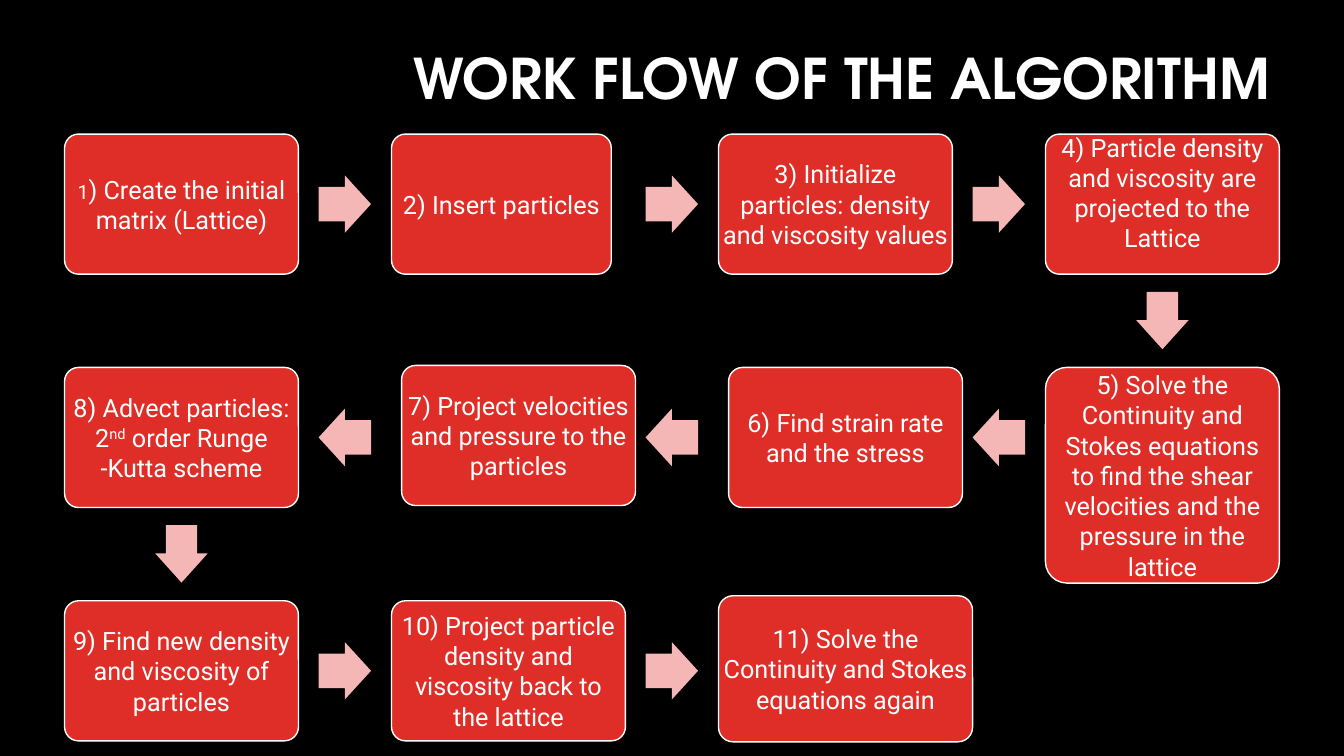
from dataclasses import dataclass

import pptx
import pptx.dml.color
import pptx.enum.shapes
import pptx.enum.text
import pptx.util
from pptx.dml.color import RGBColor
from pptx.util import Inches

BLACK = RGBColor(0x00, 0x00, 0x00)
WHITE = RGBColor(0xFF, 0xFF, 0xFF)
RED = RGBColor(0xDF, 0x2E, 0x28)
PINK = RGBColor(0xF4, 0xB7, 0xB5)

LEFT, TOP = 0.64, 1.33
COLUMN_PITCH, ROW_PITCH = 3.243, 2.315
BOX_W, BOX_H = 2.32, 1.39
ARROW_W, ARROW_H = 0.52, 0.57
RIGHT, DOWN, BACK = 0, 90, 180


@dataclass
class Run:
    text: str
    size: int = 18
    superscript: bool = False


@dataclass
class Step:
    column: int
    row: int
    runs: list[Run]
    dx: float = 0
    dy: float = 0
    width: float = BOX_W
    height: float = BOX_H
    bottom_inset: float = 0


@dataclass
class Arrow:
    """Arrow leaving the cell at column, row; BACK arrows point into it."""
    column: int
    row: int
    rotation: int


STEPS = [
    Step(0, 0, [Run("1", 14), Run(") Create the initial matrix (Lattice)")]),
    Step(1, 0, [Run("2) Insert particles")], width=2.18),
    Step(2, 0, [Run("3) Initialize particles: density and viscosity values")]),
    Step(3, 0, [Run("4) Particle density and viscosity are projected to the Lattice")],
         bottom_inset=0.23),
    Step(3, 1, [Run("5) Solve the Continuity and Stokes equations to find the shear "
                    "velocities and the pressure in the lattice")], height=2.14),
    Step(2, 1, [Run("6) Find strain rate and the stress")], dx=0.1),
    Step(1, 1, [Run("7) Project velocities and pressure to the particles")],
         dx=0.1, dy=-0.02),
    Step(0, 1, [Run("8) Advect particles: 2"), Run("nd", superscript=True),
                Run(" order Runge -Kutta scheme")]),
    Step(0, 2, [Run("9) Find new density and viscosity of particles")]),
    Step(1, 2, [Run("10) Project particle density and viscosity back to the lattice")]),
    Step(2, 2, [Run("11) Solve the Continuity and Stokes equations again")],
         dy=-0.05, width=2.52, height=1.45),
]

ARROWS = [
    *(Arrow(column, 0, RIGHT) for column in range(3)),
    Arrow(3, 0, DOWN),
    *(Arrow(column, 1, BACK) for column in (2, 1, 0)),
    Arrow(0, 1, DOWN),
    *(Arrow(column, 2, RIGHT) for column in range(2)),
]


def cell_origin(column: int, row: int) -> tuple[float, float]:
    return LEFT + column * COLUMN_PITCH, TOP + row * ROW_PITCH


def add_title(s: pptx.slide.Slide, text: str) -> None:
    sp = s.shapes.title
    sp.left, sp.top, sp.width, sp.height = (
        Inches(3.27), Inches(0.1), Inches(9.42), Inches(1.41))
    tf = sp.text_frame
    tf.text = text
    tf.vertical_anchor = pptx.enum.text.MSO_ANCHOR.MIDDLE
    p = tf.paragraphs[0]
    p.alignment = pptx.enum.text.PP_ALIGN.RIGHT
    p.line_spacing = 0.9
    font = p.runs[0].font
    font.name, font.size, font.bold = "TeX Gyre Adventor", pptx.util.Pt(40), True
    font.color.rgb = WHITE


def add_step(s: pptx.slide.Slide, step: Step) -> None:
    x, y = cell_origin(step.column, step.row)
    sp = s.shapes.add_shape(
        pptx.enum.shapes.MSO_SHAPE.ROUNDED_RECTANGLE, Inches(x + step.dx),
        Inches(y + step.dy), Inches(step.width), Inches(step.height))
    sp.adjustments[0] = 0.1
    sp.shadow.inherit = False
    sp.fill.solid()
    sp.fill.fore_color.rgb = RED
    sp.line.color.rgb = WHITE
    sp.line.width = pptx.util.Pt(1)
    tf = sp.text_frame
    tf.word_wrap = True
    tf.vertical_anchor = pptx.enum.text.MSO_ANCHOR.MIDDLE
    tf.margin_left = tf.margin_right = tf.margin_top = 0
    tf.margin_bottom = Inches(step.bottom_inset)
    p = tf.paragraphs[0]
    p.alignment = pptx.enum.text.PP_ALIGN.CENTER
    for run in step.runs:
        r = p.add_run()
        r.text = run.text
        r.font.name, r.font.size = "Roboto", pptx.util.Pt(run.size)
        r.font.color.rgb = WHITE
        if run.superscript:
            r._r.get_or_add_rPr().set("baseline", "30000")


def add_arrow(s: pptx.slide.Slide, arrow: Arrow) -> None:
    x, y = cell_origin(arrow.column, arrow.row)
    if arrow.rotation == DOWN:
        width, height, head = ARROW_H, ARROW_W, 0.555
        center_x, center_y = x + BOX_W / 2, y + 1.85
    else:
        width, height, head = ARROW_W, ARROW_H, 0.5
        center_x, center_y = x + 2.78, y + BOX_H / 2
    sp = s.shapes.add_shape(
        pptx.enum.shapes.MSO_SHAPE.RIGHT_ARROW, Inches(center_x - width / 2),
        Inches(center_y - height / 2), Inches(width), Inches(height))
    sp.rotation = arrow.rotation
    # The shaft takes 60 % of the arrow's breadth
    sp.adjustments[0] = 0.6
    sp.adjustments[1] = head if arrow.rotation == DOWN else 0.5
    sp.shadow.inherit = False
    sp.fill.solid()
    sp.fill.fore_color.rgb = PINK
    sp.line.fill.background()


def main() -> None:
    prs = pptx.Presentation()
    prs.slide_width, prs.slide_height = Inches(13.33), Inches(7.5)
    s = prs.slides.add_slide(prs.slide_layouts[5])
    s.background.fill.solid()
    s.background.fill.fore_color.rgb = BLACK
    add_title(s, "WORK FLOW OF THE ALGORITHM")
    for step in STEPS:
        add_step(s, step)
    for arrow in ARROWS:
        add_arrow(s, arrow)
    prs.save("out.pptx")


if __name__ == "__main__":
    main()
